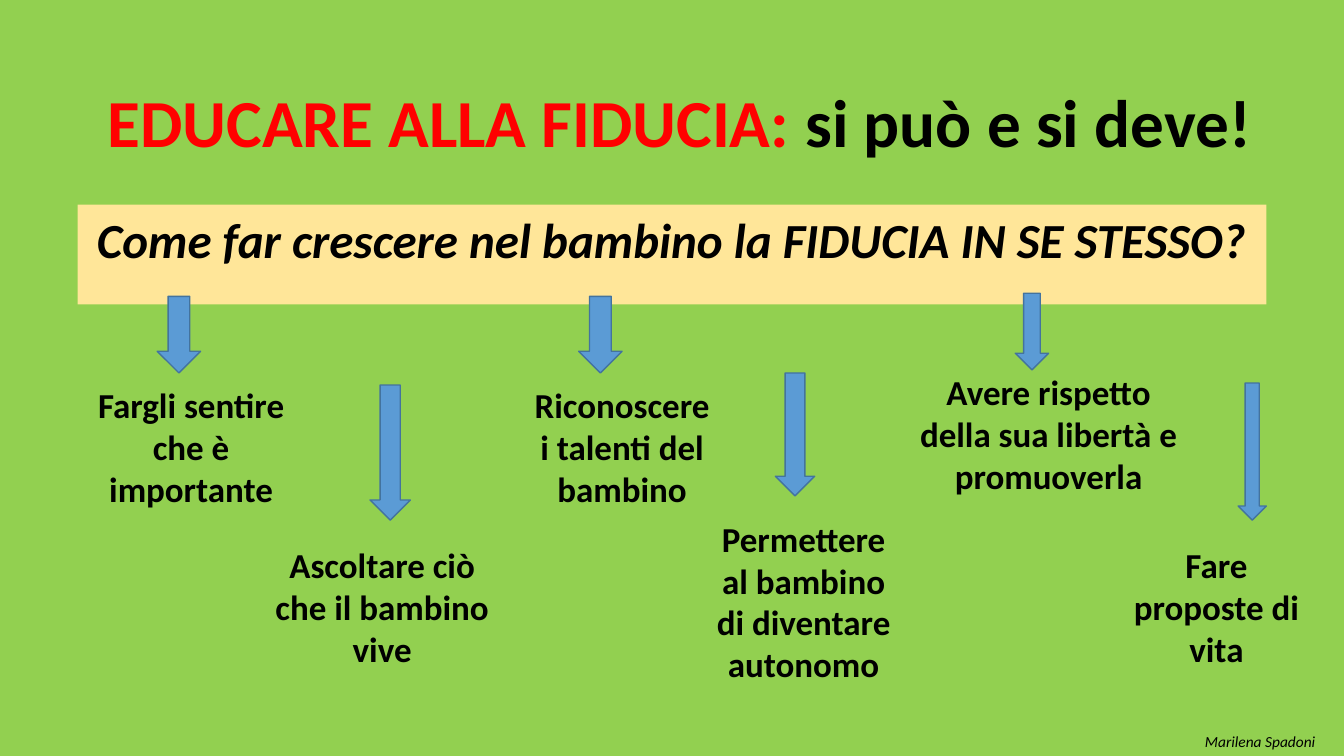
from dataclasses import dataclass

from pptx import Presentation
from pptx.dml.color import RGBColor
from pptx.enum.shapes import MSO_SHAPE
from pptx.enum.text import MSO_ANCHOR, PP_ALIGN
from pptx.util import Inches, Pt


@dataclass(frozen=True)
class Theme:
    font: str = "Calibri"
    background: str = "92D050"
    banner: str = "FFE699"
    arrow: str = "5B9BD5"
    arrow_line: str = "43739E"
    accent: str = "FF0000"
    ink: str = "000000"
    title_size: int = 48
    question_size: int = 35
    advice_size: int = 25
    author_size: int = 11


THEME = Theme()

ADVICE = [
    ("Fargli sentire che è importante",
     (0.77, 3.76, 2.25, 1.36), (1.56, 2.94, 0.43, 0.76)),
    ("Ascoltare ciò che il bambino vive",
     (2.63, 5.34, 2.32, 1.36), (3.67, 3.82, 0.4, 1.34)),
    ("Riconoscere i talenti del bambino",
     (5.17, 3.76, 2, 1.36), (5.74, 2.94, 0.43, 0.76)),
    ("Permettere al bambino di diventare autonomo",
     (6.93, 5.08, 2.08, 1.78), (7.69, 3.7, 0.39, 1.22)),
    ("Avere rispetto della sua libertà e promuoverla",
     (9.02, 3.63, 2.76, 1.36), (10.07, 2.91, 0.33, 0.76)),
    ("Fare proposte di vita",
     (11, 5.34, 2.13, 1.36), (12.28, 3.8, 0.28, 1.36)),
]


def rgb(color):
    return RGBColor.from_string(color)


def write(sp, runs, size, bold=True, italic=False, align=PP_ALIGN.CENTER):
    tf = sp.text_frame
    tf.word_wrap = True
    tf.vertical_anchor = MSO_ANCHOR.TOP
    p = tf.paragraphs[0]
    p.alignment = align
    for text, color in runs:
        r = p.add_run()
        r.text = text
        r.font.name = THEME.font
        r.font.size = Pt(size)
        r.font.bold = bold
        r.font.italic = italic
        r.font.color.rgb = rgb(color)


def add_text(s, box, runs, size, **style):
    sp = s.shapes.add_textbox(*map(Inches, box))
    write(sp, runs, size, **style)


def add_filled(s, kind, box, fill, line=None):
    sp = s.shapes.add_shape(kind, *map(Inches, box))
    sp.shadow.inherit = False
    sp.fill.solid()
    sp.fill.fore_color.rgb = rgb(fill)
    if line:
        sp.line.color.rgb = rgb(line)
        sp.line.width = Pt(1)
    else:
        sp.line.fill.background()
    return sp


def add_advice(s, text, text_box, arrow_box):
    add_text(s, text_box, [(text, THEME.ink)], THEME.advice_size)
    add_filled(s, MSO_SHAPE.DOWN_ARROW, arrow_box, THEME.arrow, THEME.arrow_line)


def main():
    prs = Presentation()
    prs.slide_width = Inches(13.33)
    prs.slide_height = Inches(7.5)
    s = prs.slides.add_slide(prs.slide_layouts[6])
    s.background.fill.solid()
    s.background.fill.fore_color.rgb = rgb(THEME.background)

    add_text(s, (0.97, 0.75, 11.73, 0.91),
             [("EDUCARE ALLA FIDUCIA: ", THEME.accent),
              ("si può e si deve!", THEME.ink)],
             THEME.title_size, align=PP_ALIGN.LEFT)
    banner = add_filled(s, MSO_SHAPE.RECTANGLE, (0.77, 2.03, 11.79, 0.99),
                        THEME.banner)
    write(banner,
          [("Come far crescere nel bambino la FIDUCIA IN SE STESSO?", THEME.ink)],
          THEME.question_size, italic=True)
    for text, text_box, arrow_box in ADVICE:
        add_advice(s, text, text_box, arrow_box)
    add_text(s, (11.72, 7.21, 1.56, 0.29), [("Marilena Spadoni", THEME.ink)],
             THEME.author_size, bold=False, italic=True)
    prs.save("out.pptx")


if __name__ == "__main__":
    main()
